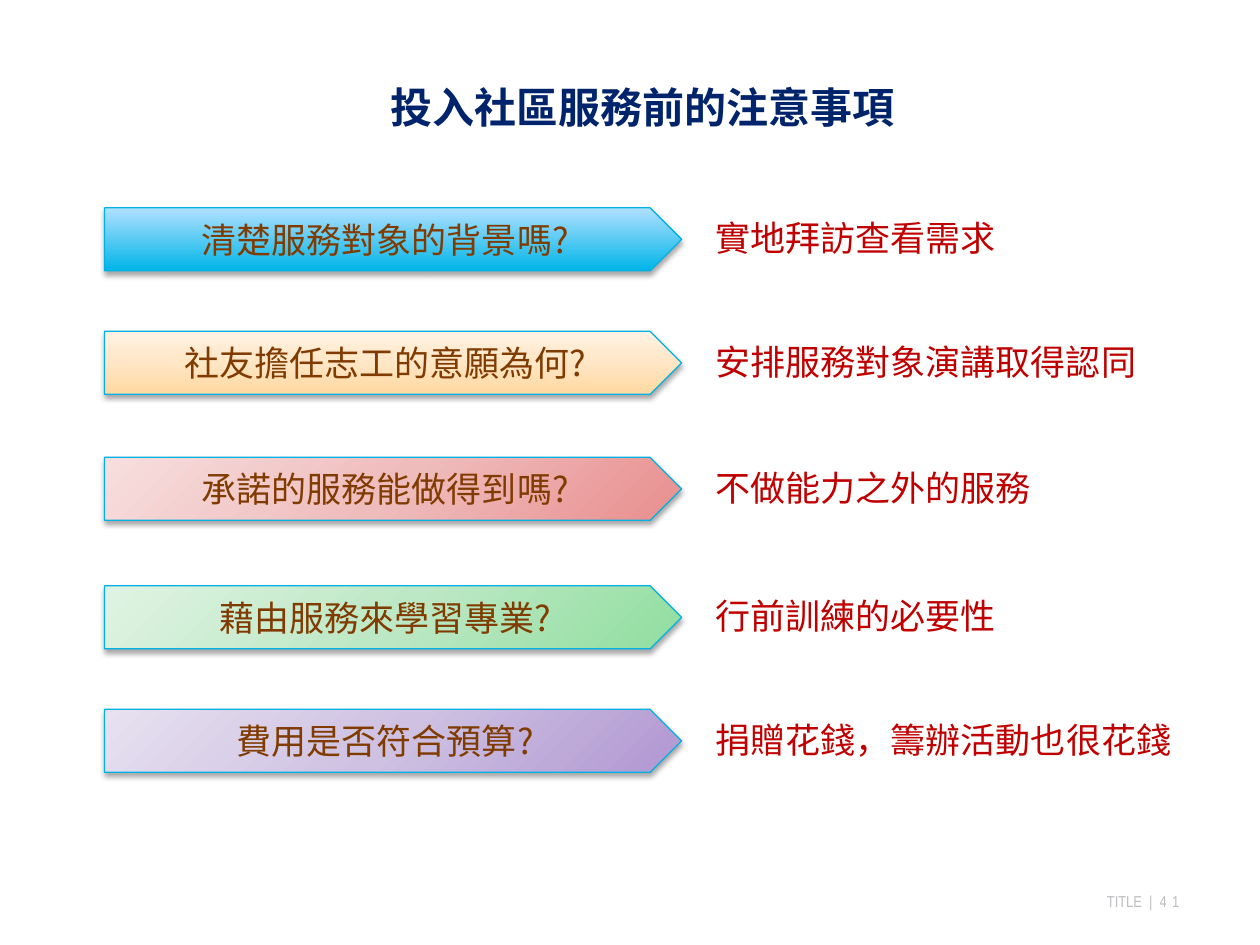
from lxml.etree import SubElement
from pptx import Presentation
from pptx.dml.color import RGBColor
from pptx.enum.shapes import MSO_SHAPE
from pptx.enum.text import MSO_ANCHOR, PP_ALIGN
from pptx.oxml import parse_xml
from pptx.oxml.ns import nsdecls, qn
from pptx.util import Inches, Pt

CJK_FONT = "Noto Sans CJK SC"
FOOTER_FONT = "Arial Narrow"
NAVY = RGBColor(0x00, 0x24, 0x6C)
BROWN = RGBColor(0x80, 0x3B, 0x00)
RED = RGBColor(0xC0, 0x00, 0x00)
CYAN = RGBColor(0x00, 0xB1, 0xE3)
GRAY = RGBColor(0xBC, 0xBD, 0xC0)
BLUES = (RGBColor(0x00, 0xB5, 0xE8), RGBColor(0xB1, 0xE0, 0xFF))
ORANGES = (RGBColor(0xFF, 0xD8, 0xA0), RGBColor(0xFF, 0xE6, 0xC5), RGBColor(0xFF, 0xF2, 0xE3))
PINKS = (RGBColor(0xE9, 0x8F, 0x8F), RGBColor(0xEF, 0xBC, 0xBC), RGBColor(0xF7, 0xDE, 0xDE))
GREENS = (RGBColor(0x91, 0xDE, 0xA0), RGBColor(0xBD, 0xE8, 0xC5), RGBColor(0xDF, 0xF3, 0xE3))
PURPLES = (RGBColor(0xB1, 0x97, 0xD2), RGBColor(0xCE, 0xC1, 0xE2), RGBColor(0xE7, 0xE1, 0xF0))

QUESTION_LEFT, QUESTION_WIDTH, QUESTION_HEIGHT = 0.83, 4.58, 0.5
ANSWER_LEFT, ANSWER_HEIGHT, ANSWER_DROP = 5.58, 0.44, 0.02
ROWS = [
    (1.65, "清楚服務對象的背景嗎?", BLUES, 270, "實地拜訪查看需求", 2.45),
    (2.63, "社友擔任志工的意願為何?", ORANGES, 270, "安排服務對象演講取得認同", 3.57),
    (3.63, "承諾的服務能做得到嗎?", PINKS, 225, "不做能力之外的服務", 2.73),
    (4.65, "藉由服務來學習專業?", GREENS, 225, "行前訓練的必要性", 2.45),
    (5.63, "費用是否符合預算?", PURPLES, 225, "捐贈花錢，籌辦活動也很花錢", 3.85),
]


def add_span(para, text, size=20, color=RED, font=CJK_FONT, bold=False, spacing=0):
    """Append formatted text to a paragraph, with letter spacing in points."""
    span = para.add_run()
    span.text = text
    span.font.size = Pt(size)
    span.font.bold = bold
    span.font.color.rgb = color
    span.font.name = font
    properties = span.font._element
    SubElement(properties, qn("a:ea")).set("typeface", font)
    if spacing:
        properties.set("spc", str(spacing * 100))


def add_label(page, left, top, width, height, text, **style):
    """Add a single-line text box."""
    box = page.shapes.add_textbox(Inches(left), Inches(top), Inches(width), Inches(height))
    box.text_frame.word_wrap = False
    add_span(box.text_frame.paragraphs[0], text, **style)


def set_gradient(shape, colors, angle):
    """Fill a shape with evenly spaced colours along a clockwise angle."""
    step = 100000 // (len(colors) - 1)
    stops = "".join(
        f'<a:gs pos="{index * step}"><a:srgbClr val="{color}"/></a:gs>'
        for index, color in enumerate(colors)
    )
    gradient = parse_xml(
        f'<a:gradFill {nsdecls("a")} rotWithShape="1"><a:gsLst>{stops}</a:gsLst>'
        f'<a:lin ang="{angle * 60000}" scaled="0"/></a:gradFill>'
    )
    shape._element.spPr.find(qn("a:prstGeom")).addnext(gradient)


def set_shadow(shape):
    """Give a shape a soft shadow that falls straight down."""
    shape.shadow.inherit = False
    effects = shape._element.spPr.find(qn("a:effectLst"))
    effects.append(parse_xml(
        f'<a:outerShdw {nsdecls("a")} blurRad="{Pt(3.1)}" dist="{Pt(1.8)}" dir="5400000" '
        'rotWithShape="0"><a:srgbClr val="000000"><a:alpha val="35000"/></a:srgbClr></a:outerShdw>'
    ))


def add_question(page, top, text, colors, angle):
    """Add a pentagon arrow that holds a question."""
    arrow = page.shapes.add_shape(
        MSO_SHAPE.PENTAGON, Inches(QUESTION_LEFT), Inches(top),
        Inches(QUESTION_WIDTH), Inches(QUESTION_HEIGHT),
    )
    set_gradient(arrow, colors, angle)
    arrow.line.color.rgb = CYAN
    arrow.line.width = Pt(0.75)
    set_shadow(arrow)
    arrow.text_frame.vertical_anchor = MSO_ANCHOR.MIDDLE
    para = arrow.text_frame.paragraphs[0]
    para.alignment = PP_ALIGN.CENTER
    add_span(para, text, color=BROWN)


def add_footer(page):
    """Add the right-aligned footer with the page number."""
    box = page.shapes.add_textbox(Inches(7.75), Inches(7.08), Inches(1.75), Inches(0.15))
    frame = box.text_frame
    frame.margin_left = frame.margin_top = frame.margin_right = frame.margin_bottom = 0
    frame.word_wrap = True
    para = frame.paragraphs[0]
    para.alignment = PP_ALIGN.RIGHT
    style = {"size": 9, "color": GRAY, "font": FOOTER_FONT}
    add_span(para, "TITLE  |  ", **style)
    add_span(para, "41  ", spacing=3, **style)


def main():
    """Build the slide and save it."""
    deck = Presentation()
    deck.slide_width, deck.slide_height = Inches(10), Inches(7.5)
    page = deck.slides.add_slide(deck.slide_layouts[6])
    add_footer(page)
    add_label(page, 3, 0.6, 4.24, 0.51, "投入社區服務前的注意事項", size=24, color=NAVY, bold=True)
    for top, question, colors, angle, answer, width in ROWS:
        add_question(page, top, question, colors, angle)
        add_label(page, ANSWER_LEFT, top + ANSWER_DROP, width, ANSWER_HEIGHT, answer)
    deck.save("out.pptx")


if __name__ == "__main__":
    main()
